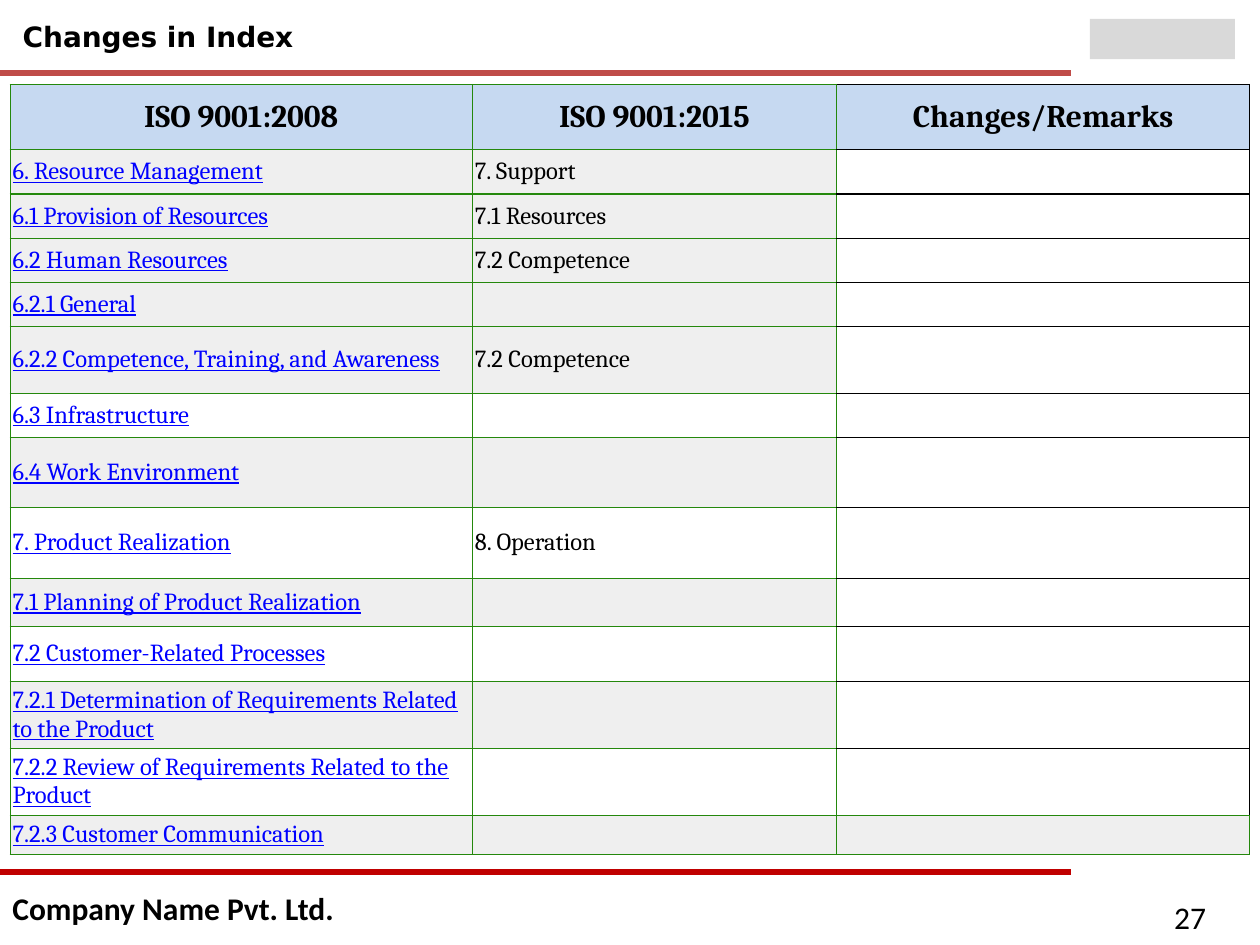
from lxml.etree import SubElement
from pptx import Presentation
from pptx.dml.color import RGBColor
from pptx.enum.shapes import MSO_CONNECTOR, MSO_SHAPE
from pptx.enum.text import MSO_ANCHOR, PP_ALIGN
from pptx.oxml import parse_xml
from pptx.oxml.ns import nsdecls, qn
from pptx.util import Inches, Pt

COLORS = {
    "black": "000000", "white": "FFFFFF", "band": "EFEFEF", "header": "C6D9F1",
    "link": "0000FF", "border": "24880C", "top_rule": "BF4C48",
    "bottom_rule": "C00000", "badge": "D9D9D9",
}


def write(tf, text, color, align=PP_ALIGN.LEFT, anchor=MSO_ANCHOR.MIDDLE, **font):
    tf.word_wrap = True
    tf.vertical_anchor = anchor
    p = tf.paragraphs[0]
    p.alignment = align
    r = p.add_run()
    r.text = text
    r.font.color.rgb = RGBColor.from_string(COLORS[color])
    for name, value in font.items():
        setattr(r.font, name, value)


def set_borders(cell, colors):
    tcPr = cell._tc.get_or_add_tcPr()
    for i, (side, color) in enumerate(zip("LRTB", colors)):
        tcPr.insert(i, parse_xml(
            f'<a:ln{side} {nsdecls("a")} w="{Pt(0.75)}"><a:solidFill>'
            f'<a:srgbClr val="{COLORS[color]}"/></a:solidFill></a:ln{side}>'))


prs = Presentation()
prs.slide_width, prs.slide_height = Inches(10), Inches(7.5)
s = prs.slides.add_slide(prs.slide_layouts[5])

title = s.shapes.title
box = {"left": 0.08, "top": 0.1, "width": 5.08, "height": 0.37}
for name, value in box.items():
    setattr(title, name, Inches(value))
write(title.text_frame, "Changes in Index", "black",
      size=Pt(16), name="DejaVu Sans", bold=True)

for y, color in [(0.58, "top_rule"), (6.92, "bottom_rule")]:
    line = s.shapes.add_connector(
        MSO_CONNECTOR.STRAIGHT, Inches(0), Inches(y), Inches(8.5), Inches(y))
    line.line.color.rgb = RGBColor.from_string(COLORS[color])
    line.line.width = Pt(3)
    SubElement(line._element.spPr, qn("a:effectLst"))

badge = s.shapes.add_shape(
    MSO_SHAPE.RECTANGLE, Inches(8.65), Inches(0.15), Inches(1.15), Inches(0.32))
badge.shadow.inherit = False
badge.fill.solid()
badge.fill.fore_color.rgb = RGBColor.from_string(COLORS["badge"])
badge.line.fill.background()

footers = [
    ("Company Name Pvt. Ltd.", 0, 2.83, 0.25, MSO_ANCHOR.MIDDLE, True),
    ("27", 9.22, 0.77, 0.4, MSO_ANCHOR.TOP, False),
]
for text, x, w, h, anchor, bold in footers:
    sp = s.shapes.add_textbox(Inches(x), Inches(7.08), Inches(w), Inches(h))
    write(sp.text_frame, text, "black", anchor=anchor,
          size=Pt(18), name="Calibri", bold=bold)

headers = ["ISO 9001:2008", "ISO 9001:2015", "Changes/Remarks"]
rows = [
    ("6. Resource Management", "7. Support", 0.35, "band"),
    ("6.1 Provision of Resources", "7.1 Resources", 0.35, "band"),
    ("6.2 Human Resources", "7.2 Competence", 0.35, "band"),
    ("6.2.1 General", "", 0.35, "band"),
    ("6.2.2 Competence, Training, and Awareness", "7.2 Competence", 0.53, "band"),
    ("6.3 Infrastructure", "", 0.35, "white"),
    ("6.4 Work Environment", "", 0.56, "band"),
    ("7. Product Realization", "8. Operation", 0.56, "white"),
    ("7.1 Planning of Product Realization", "", 0.38, "band"),
    ("7.2 Customer-Related Processes", "", 0.44, "white"),
    ("7.2.1 Determination of Requirements Related to the Product", "", 0.53, "band"),
    ("7.2.2 Review of Requirements Related to the Product", "", 0.53, "white"),
    ("7.2.3 Customer Communication", "", 0.31, "band"),
]
widths = [3.67, 2.89, 3.28]
heights = [0.52] + [row[2] for row in rows]
last = len(rows)

table = s.shapes.add_table(
    len(heights), len(widths), Inches(0.08), Inches(0.67),
    Inches(sum(widths)), Inches(sum(heights))).table
table.first_row = table.horz_banding = False
for column, w in zip(table.columns, widths):
    column.width = Inches(w)
for row, h in zip(table.rows, heights):
    row.height = Inches(h)

for i in range(len(heights)):
    for j in range(len(widths)):
        cell = table.cell(i, j)
        for side in ("left", "right", "top", "bottom"):
            setattr(cell, f"margin_{side}", Inches(0.02))
        cell.vertical_anchor = MSO_ANCHOR.MIDDLE
        remarks = j == 2 and i < last
        if i == 0:
            text, fill = headers[j], "header"
        else:
            text = rows[i - 1][j] if j < 2 else ""
            fill = "white" if remarks else rows[i - 1][3]
        cell.fill.solid()
        cell.fill.fore_color.rgb = RGBColor.from_string(COLORS[fill])
        edge = "black" if remarks else "border"
        bottom = "border" if i >= last - 1 else edge
        set_borders(cell, ["border", edge, edge if i < last else "border", bottom])

        p = cell.text_frame.paragraphs[0]
        if not text:
            p._p.get_or_add_endParaRPr().set("sz", "1400")
            continue
        p.alignment = PP_ALIGN.CENTER if i == 0 else PP_ALIGN.LEFT
        r = p.add_run()
        r.text = text
        link = i > 0 and j == 0
        r.font.color.rgb = RGBColor.from_string(COLORS["link" if link else "black"])
        style = {"name": "Cambria", "size": Pt(14 if i else 18),
                 "bold": i == 0, "underline": link}
        for name, value in style.items():
            setattr(r.font, name, value)

prs.save("out.pptx")
